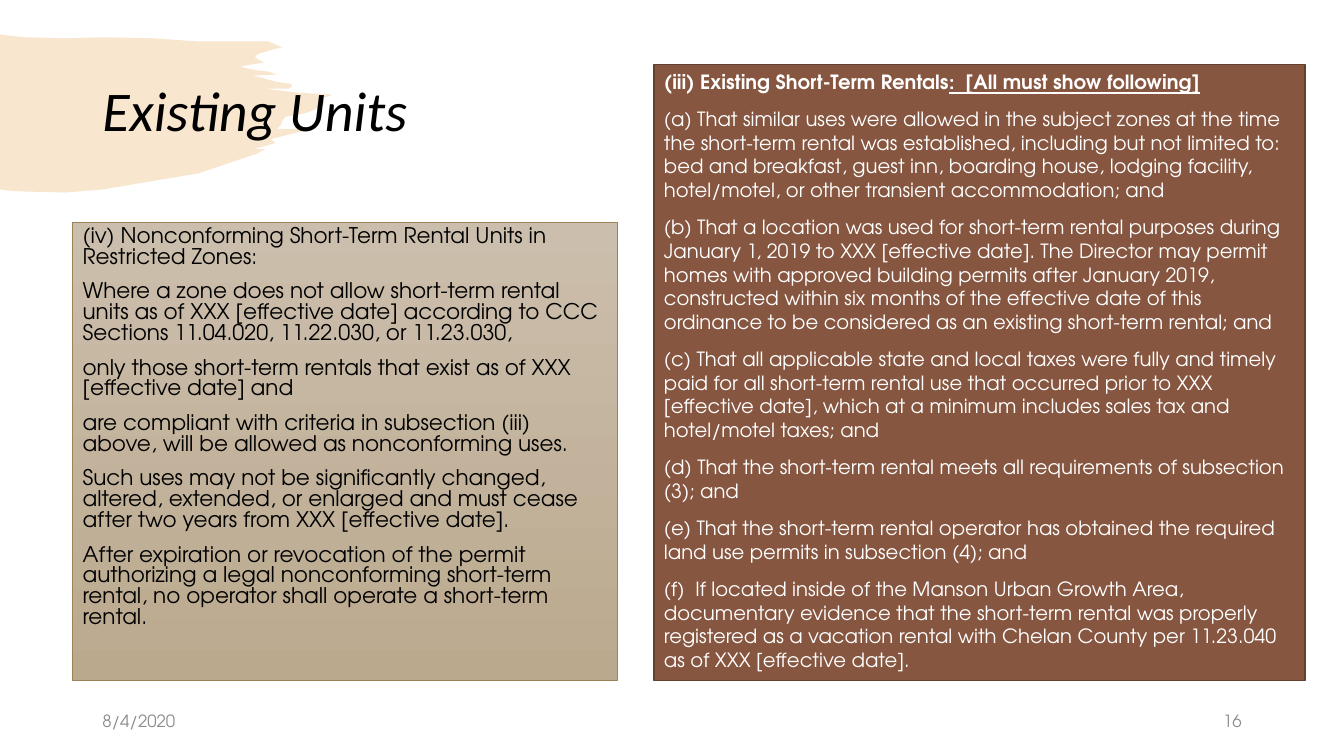
"""Builds the slide on existing short-term rental units."""
from lxml.etree import SubElement
from pptx import Presentation
from pptx.dml.color import RGBColor
from pptx.enum.shapes import MSO_SHAPE as Shape
from pptx.enum.text import MSO_ANCHOR as Anchor, PP_ALIGN as Align
from pptx.oxml.ns import qn
from pptx.util import Pt

BODY_FONT = "TeX Gyre Adventor"

RESTRICTED_ZONES = [
    "(iv) Nonconforming Short-Term Rental Units in Restricted Zones:",
    "Where a zone does not allow short-term rental units as of XXX [effective date] "
    "according to CCC Sections 11.04.020, 11.22.030, or 11.23.030,",
    "only those short-term rentals that exist as of XXX [effective date] and",
    "are compliant with criteria in subsection (iii) above, will be allowed as "
    "nonconforming uses.",
    "Such uses may not be significantly changed, altered, extended, or enlarged and must "
    "cease after two years from XXX [effective date].",
    "After expiration or revocation of the permit authorizing a legal nonconforming "
    "short-term rental, no operator shall operate a short-term rental.",
]
EXISTING_HEADING = [
    ("(iii) Existing Short-Term Rentals", {"bold": True}),
    (":  [All must show following]", {"bold": True, "underline": True}),
]
EXISTING_RENTALS = [
    EXISTING_HEADING,
    "(a) That similar uses were allowed in the subject zones at the time the short-term "
    "rental was established, including but not limited to: bed and breakfast, guest inn, "
    "boarding house, lodging facility, hotel/motel, or other transient accommodation; and",
    "(b) That a location was used for short-term rental purposes during January 1, 2019 to "
    "XXX [effective date]. The Director may permit homes with approved building permits "
    "after January 2019, constructed within six months of the effective date of this "
    "ordinance to be considered as an existing short-term rental; and",
    "(c) That all applicable state and local taxes were fully and timely paid for all "
    "short-term rental use that occurred prior to XXX [effective date], which at a minimum "
    "includes sales tax and hotel/motel taxes; and",
    "(d) That the short-term rental meets all requirements of subsection (3); and",
    "(e) That the short-term rental operator has obtained the required land use permits in "
    "subsection (4); and",
    "(f)  If located inside of the Manson Urban Growth Area, documentary evidence that the "
    "short-term rental was properly registered as a vacation rental with Chelan County per "
    "11.23.040 as of XXX [effective date].",
]
BRUSH_UNIT = 0.72
BRUSH_OUTLINE = [
    (0, 34), (6, 35), (25, 37), (66, 38), (102, 37), (151, 38), (194, 41), (248, 41),
    (266, 41), (280, 47), (271, 49), (255, 54), (253, 57), (256, 59), (262, 62),
    (238, 66), (246, 68), (256, 70), (266, 71), (275, 74), (251, 75), (263, 78),
    (273, 81), (280, 82), (288, 83), (290, 85), (287, 88), (284, 88), (263, 88),
    (295, 92), (330, 94), (321, 97), (322, 103), (318, 106), (307, 111), (300, 113),
    (283, 116), (280, 120), (278, 125), (274, 128), (308, 128), (269, 138), (273, 142),
    (252, 148), (263, 148), (256, 152), (197, 172), (102, 188), (65, 191), (23, 190),
    (7, 189), (0, 188),
]
TITLE_STYLE = {"size": Pt(40), "name": "Calibri", "italic": True}
ZONES_STYLE = {"size": Pt(15.4), "name": BODY_FONT}
RENTALS_STYLE = {"size": Pt(14), "name": BODY_FONT}
FOOTER_STYLE = {"size": Pt(12), "name": BODY_FONT}


def paint(color, value):
    color.rgb = RGBColor.from_string(value)


def write(shape, paragraphs, style, color, anchor, layout):
    frame = shape.text_frame
    frame.word_wrap = True
    frame.vertical_anchor = anchor
    for index, content in enumerate(paragraphs):
        paragraph = frame.paragraphs[0] if index == 0 else frame.add_paragraph()
        for key, value in layout.items():
            setattr(paragraph, key, value)
        for words, extra in [(content, {})] if isinstance(content, str) else content:
            run = paragraph.add_run()
            run.text = words
            for key, value in {**style, **extra}.items():
                setattr(run.font, key, value)
            paint(run.font.color, color)


def add_label(slide, box, words, style, color, align):
    label = slide.shapes.add_textbox(*map(Pt, box))
    write(label, [words], style, color, Anchor.MIDDLE, {"alignment": align})


def add_panel(slide, box, border, border_width):
    panel = slide.shapes.add_shape(Shape.RECTANGLE, *map(Pt, box))
    panel.shadow.inherit = False
    paint(panel.line.color, border)
    panel.line.width = Pt(border_width)
    return panel


def add_brush(slide):
    builder = slide.shapes.build_freeform(*BRUSH_OUTLINE[0], scale=float(Pt(BRUSH_UNIT)))
    builder.add_line_segments(BRUSH_OUTLINE[1:], close=True)
    brush = builder.convert_to_shape()
    brush.shadow.inherit = False
    brush.line.fill.background()
    brush.fill.solid()
    paint(brush.fill.fore_color, "E48312")
    tint = brush.element.spPr.find(qn("a:solidFill"))[0]
    SubElement(tint, qn("a:alpha"), val="20000")


def main():
    deck = Presentation()
    deck.slide_width, deck.slide_height = Pt(960), Pt(540)
    slide = deck.slides.add_slide(deck.slide_layouts[6])

    add_brush(slide)
    add_label(slide, (66, 28.8, 828, 104.4), "Existing Units", TITLE_STYLE, "000000",
              Align.LEFT)
    slide.shapes[-1].text_frame.paragraphs[0].line_spacing = 0.9

    zones = add_panel(slide, (52, 158.6, 388.8, 327.4), "9B8357", 0.5)
    zones.fill.gradient()
    zones.fill.gradient_angle = 270
    for stop, shade in zip(zones.fill.gradient_stops, ("CBBEAC", "BBA98E")):
        paint(stop.color, shade)
    spacing = {"alignment": Align.LEFT, "space_before": Pt(10)}
    write(zones, RESTRICTED_ZONES, ZONES_STYLE, "000000", Anchor.TOP,
          {**spacing, "line_spacing": 0.8})

    rentals = add_panel(slide, (467.2, 46.2, 465, 439.8), "63402F", 1)
    rentals.fill.solid()
    paint(rentals.fill.fore_color, "865640")
    write(rentals, EXISTING_RENTALS, RENTALS_STYLE, "FFFFFF", Anchor.TOP, spacing)

    for left, words, align in ((66, "8/4/2020", Align.LEFT), (678, "16", Align.RIGHT)):
        add_label(slide, (left, 500.5, 216, 28.8), words, FOOTER_STYLE, "8C8C8C", align)

    deck.save("out.pptx")


if __name__ == "__main__":
    main()
